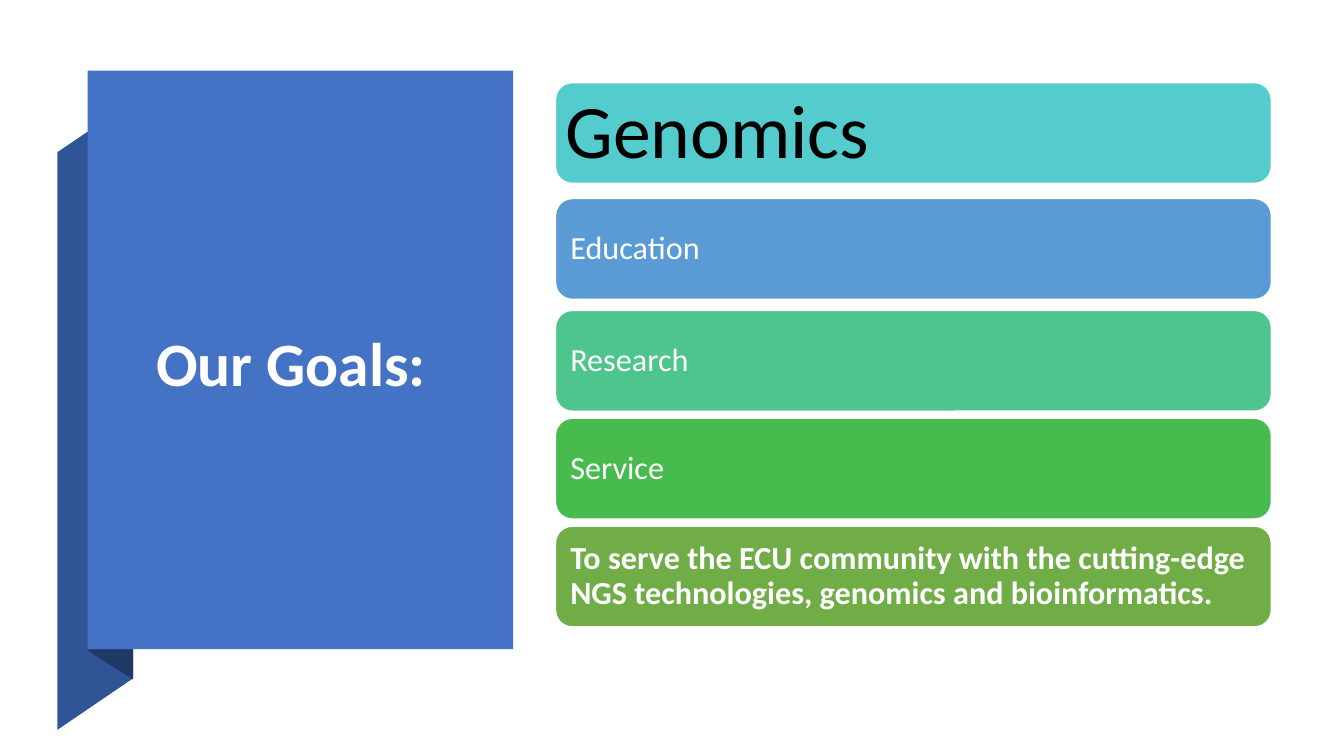
import pptx
import pptx.dml.color
import pptx.enum.shapes
import pptx.enum.text
import pptx.util

Inches = pptx.util.Inches
Pt = pptx.util.Pt
RGBColor = pptx.dml.color.RGBColor
MSO_SHAPE = pptx.enum.shapes.MSO_SHAPE
MSO_ANCHOR = pptx.enum.text.MSO_ANCHOR
PP_ALIGN = pptx.enum.text.PP_ALIGN

WHITE = RGBColor(0xFF, 0xFF, 0xFF)
BLACK = RGBColor(0x00, 0x00, 0x00)
RIBBON = RGBColor(0x2F, 0x55, 0x97)
FOLD = RGBColor(0x20, 0x38, 0x64)
PANEL = RGBColor(0x44, 0x72, 0xC4)
TEAL = RGBColor(0x54, 0xCC, 0xCD)
BLUE = RGBColor(0x5B, 0x9B, 0xD5)
MINT = RGBColor(0x4D, 0xC5, 0x8D)
GREEN = RGBColor(0x48, 0xBB, 0x4F)
OLIVE = RGBColor(0x70, 0xAD, 0x47)

GOALS = [
    (0.82, TEAL, "", False),
    (1.97, BLUE, "Education", False),
    (3.08, MINT, "Research", False),
    (4.15, GREEN, "Service", False),
    (5.22, OLIVE, "To serve the ECU community with the cutting-edge "
     "NGS technologies, genomics and bioinformatics.", True),
]


def paint(s, fill, line=None):
    s.shadow.inherit = False
    s.fill.solid()
    s.fill.fore_color.rgb = fill
    if line is None:
        s.line.fill.background()
    else:
        s.line.color.rgb = line
        s.line.width = Pt(1)


def write(s, text, size, color, bold=False, spacing=0.9, anchor=MSO_ANCHOR.MIDDLE):
    tf = s.text_frame
    tf.word_wrap = True
    tf.vertical_anchor = anchor
    tf.text = text
    p = tf.paragraphs[0]
    p.alignment = PP_ALIGN.LEFT
    p.line_spacing = spacing
    for r in p.runs:
        r.font.name = "Calibri"
        r.font.size = Pt(size)
        r.font.bold = bold
        r.font.color.rgb = color


def add_outline(slide, points, fill):
    corners = [(Inches(x), Inches(y)) for x, y in points]
    builder = slide.shapes.build_freeform(*corners[0])
    builder.add_line_segments(corners[1:], close=True)
    paint(builder.convert_to_shape(), fill)


def add_box(slide, kind, left, top, width, height, fill, line=None):
    s = slide.shapes.add_shape(
        kind, Inches(left), Inches(top), Inches(width), Inches(height))
    paint(s, fill, line)
    return s


def add_label(slide, left, top, width, height, text, size, color, **style):
    s = slide.shapes.add_textbox(
        Inches(left), Inches(top), Inches(width), Inches(height))
    write(s, text, size, color, **style)


def add_goal(slide, top, fill, text, bold):
    s = add_box(slide, MSO_SHAPE.ROUNDED_RECTANGLE, 5.51, top, 7.1, 1, fill, WHITE)
    if text:
        write(s, text, 23, WHITE, bold)


def main():
    prs = pptx.Presentation()
    prs.slide_width = Inches(13.33)
    prs.slide_height = Inches(7.5)
    slide = prs.slides.add_slide(prs.slide_layouts[6])

    add_outline(slide, [(0.57, 7.24), (1.32, 6.73), (1.32, 1), (0.57, 1.51)], RIBBON)
    add_outline(slide, [(0.88, 6.46), (1.32, 6.74), (1.32, 0.99), (0.88, 0.7)], FOLD)
    add_box(slide, MSO_SHAPE.RECTANGLE, 0.87, 0.7, 4.22, 5.74, PANEL)
    add_label(slide, 1.45, 1.67, 3.01, 3.94, "Our Goals:", 44, WHITE, bold=True)

    for goal in GOALS:
        add_goal(slide, *goal)
    add_label(slide, 5.51, 0.77, 4.78, 1.01, "Genomics", 54, BLACK,
              spacing=1.0, anchor=MSO_ANCHOR.TOP)

    prs.save("out.pptx")


if __name__ == "__main__":
    main()
